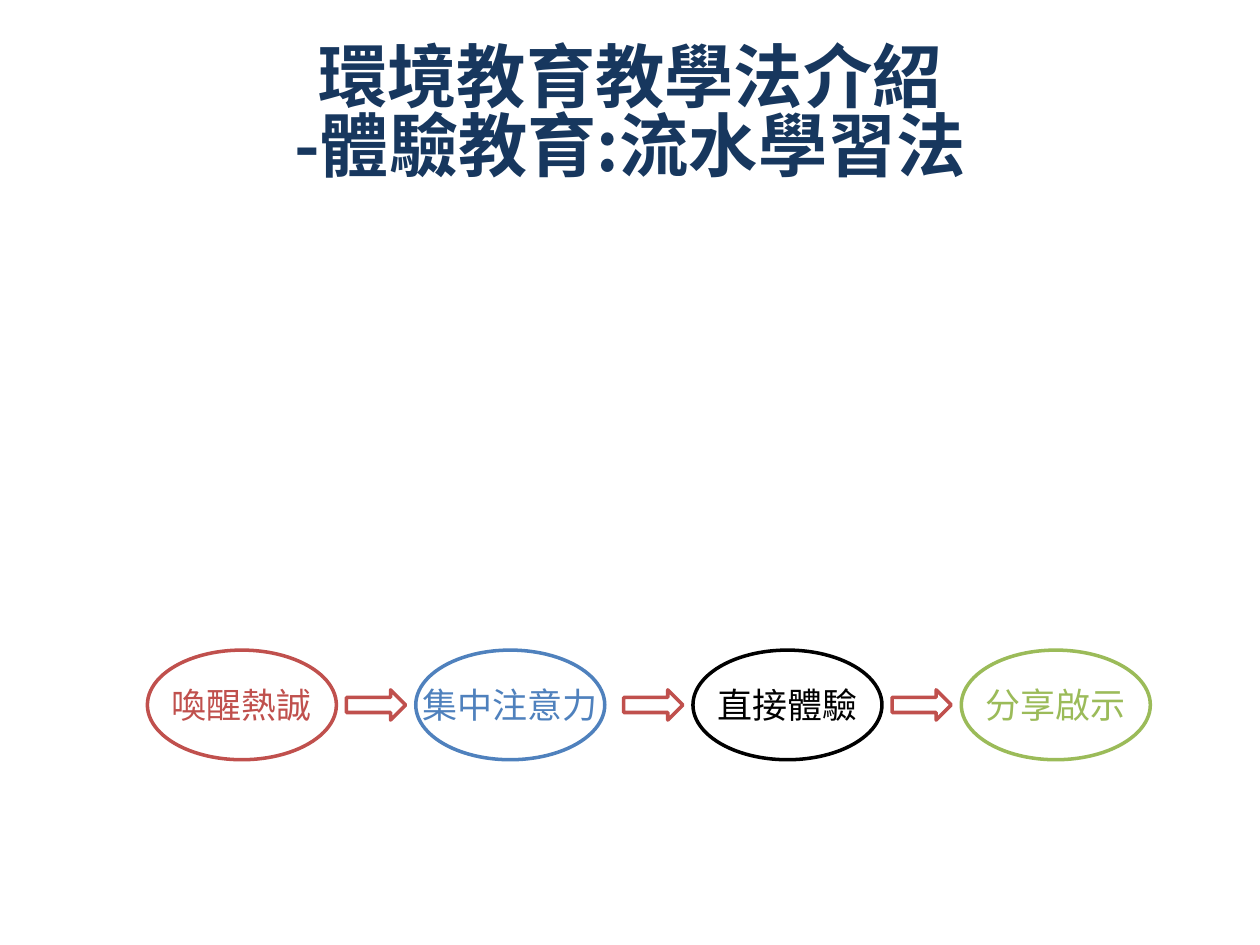
"""Build a slide with the four stages of flow learning."""
from pptx import Presentation
from pptx import util as u
from pptx.dml.color import RGBColor
from pptx.enum import shapes, text
from pptx.oxml.ns import qn
from lxml import etree

NAVY = RGBColor(0x17, 0x37, 0x5E)
RED = RGBColor(0xC0, 0x50, 0x4D)
BLUE = RGBColor(0x4F, 0x81, 0xBD)
BLACK = RGBColor(0, 0, 0)
GREEN = RGBColor(0x9B, 0xBB, 0x59)
WHITE = RGBColor(255, 255, 255)
FONT = "Noto Sans CJK SC"

TITLE = "環境教育教學法介紹\v-體驗教育:流水學習法"
STAGES = [
    ("喚醒熱誠", RED, 1.17),
    ("集中注意力", BLUE, 3.3),
    ("直接體驗", BLACK, 5.5),
    ("分享啟示", GREEN, 7.63),
]
TOP, WIDE, HIGH = 5.16, 1.5, 0.87
STEP, LONG, THICK = 0.55, 0.47, 0.24


def write(shape, words, size, color, bold=False, wrap=True, space=1.0):
    frame = shape.text_frame
    frame.text = words
    frame.word_wrap = wrap
    frame.vertical_anchor = text.MSO_ANCHOR.MIDDLE
    para = frame.paragraphs[0]
    para.alignment = text.PP_ALIGN.CENTER
    para.line_spacing = space
    for run in para.runs:
        font = run.font
        font.name, font.size, font.bold = FONT, u.Pt(size), bold
        font.color.rgb = color
        east = etree.SubElement(run._r.get_or_add_rPr(), qn("a:ea"))
        east.set("typeface", FONT)


def draw(slide, kind, box, color):
    shape = slide.shapes.add_shape(kind, *map(u.Inches, box))
    shape.shadow.inherit = False
    shape.fill.solid()
    shape.fill.fore_color.rgb = WHITE
    shape.line.color.rgb = color
    shape.line.width = u.Pt(2)
    return shape


def main():
    deck = Presentation()
    deck.slide_width, deck.slide_height = u.Inches(10), u.Inches(7.5)
    slide = deck.slides.add_slide(deck.slide_layouts[5])
    title = slide.shapes.title
    title.left, title.top, title.width, title.height = map(
        u.Inches, (0.5, 0.3, 9, 1.25))
    write(title, TITLE, 39.6, NAVY, bold=True, space=0.82)

    kinds = shapes.MSO_SHAPE
    for i, (name, color, left) in enumerate(STAGES):
        oval = draw(slide, kinds.OVAL, (left, TOP, WIDE, HIGH), color)
        write(oval, name, 20, color, wrap=False)
        if i:
            top = TOP + (HIGH - THICK) / 2
            draw(slide, kinds.RIGHT_ARROW, (left - STEP, top, LONG, THICK), RED)
    deck.save("out.pptx")


if __name__ == "__main__":
    main()
